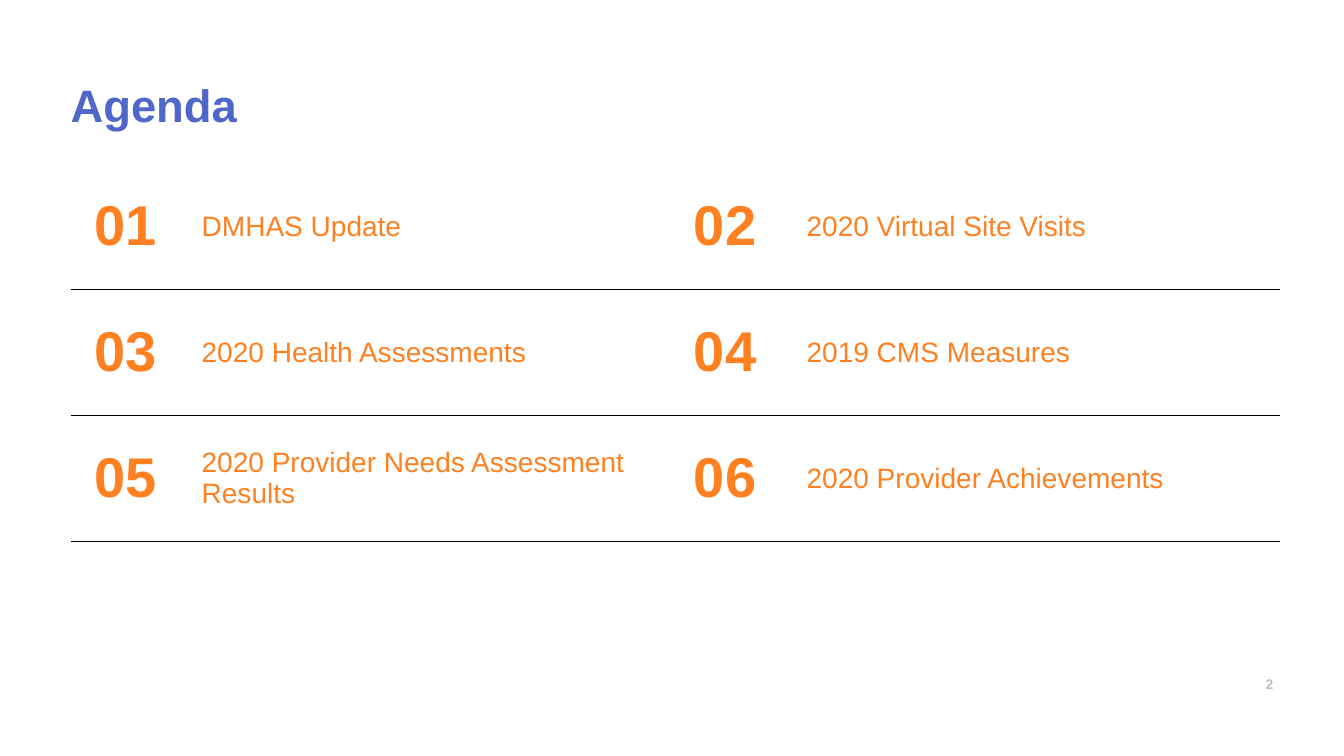
from lxml import etree
from pptx import Presentation
from pptx.dml.color import RGBColor
from pptx.enum.text import MSO_ANCHOR, MSO_AUTO_SIZE, PP_ALIGN
from pptx.oxml import parse_xml
from pptx.oxml.ns import nsdecls, qn
from pptx.util import Inches, Pt

LEFT, RIGHT = PP_ALIGN.LEFT, PP_ALIGN.RIGHT
MIDDLE = MSO_ANCHOR.MIDDLE
FIXED = MSO_AUTO_SIZE.NONE

BLUE = RGBColor(0x4E, 0x67, 0xC8)
ORANGE = RGBColor(0xFF, 0x80, 0x21)
GRAY = RGBColor(0xBF, 0xBF, 0xBF)
WHITE = RGBColor(0xFF, 0xFF, 0xFF)
BLACK = RGBColor(0, 0, 0)

PLAIN = "{2D5ABB26-0587-4C30-8999-92F81FD0307C}"
SIDES = ("left", "top", "right", "bottom")
COLS = 2
TOPICS = [
    "DMHAS Update",
    "2020 Virtual Site Visits",
    "2020 Health Assessments",
    "2019 CMS Measures",
    "2020 Provider Needs Assessment Results",
    "2020 Provider Achievements",
]


def write(frame, text, size, color, bold, align=LEFT):
    para = frame.paragraphs[0]
    para.alignment = align
    run = para.add_run()
    run.text = text
    look = {"name": "Arial", "size": Pt(size), "bold": bold}
    for key, value in look.items():
        setattr(run.font, key, value)
    run.font.color.rgb = color
    return para


def pad(item, *insets):
    """Set the margins of a cell or text frame: left, top, right, bottom."""
    for side, inset in zip(SIDES, insets):
        setattr(item, f"margin_{side}", Inches(inset))


def rule(cell):
    """Draw a thin line along the bottom of a cell."""
    line = parse_xml(f'<a:lnB {nsdecls("a")} w="{Pt(0.5)}"/>')
    fill = etree.SubElement(line, qn("a:solidFill"))
    etree.SubElement(fill, qn("a:srgbClr"), val=str(BLACK))
    cell._tc.get_or_add_tcPr().insert(0, line)


def add_title(slide, left, top, width, height):
    title = slide.shapes.title
    box = {"left": left, "top": top, "width": width, "height": height}
    for key, value in box.items():
        setattr(title, key, Inches(value))
    frame = title.text_frame
    frame.auto_size = FIXED
    frame.vertical_anchor = MIDDLE
    pad(frame, 0, 0, 0, 0)
    write(frame, "Agenda", 32.4, BLUE, True).line_spacing = 1.14


def fill_cell(cell, text, size, bold, align, insets):
    cell.fill.solid()
    cell.fill.fore_color.rgb = WHITE
    cell.vertical_anchor = MIDDLE
    pad(cell, *insets)
    write(cell.text_frame, text, size, ORANGE, bold, align)
    rule(cell)


def add_agenda(slide, left, top, width, height):
    rows = len(TOPICS) // COLS
    shape = slide.shapes.add_table(
        rows, 2 * COLS, Inches(left), Inches(top), Inches(width), Inches(height))
    table = shape.table
    table.first_row = table.horz_banding = False
    table._tbl.tblPr.find(qn("a:tableStyleId")).text = PLAIN
    for row in table.rows:
        row.height = Inches(height / rows)
    slim = 0.9
    for col, column in enumerate(table.columns):
        column.width = Inches(width / COLS - slim if col % 2 else slim)
    for i, topic in enumerate(TOPICS):
        row, col = divmod(i, COLS)
        edge = (0.1, 0, 0.1, 0) if col else (0.05, 0.03, 0.05, 0.03)
        fill_cell(table.cell(row, 2 * col), f"{i + 1:02}", 40, True, RIGHT, edge)
        fill_cell(table.cell(row, 2 * col + 1), topic, 20, False, LEFT,
                  (0.4, 0, 0.2, 0))


def add_number(slide, left, top, width, height):
    box = slide.shapes.add_textbox(
        Inches(left), Inches(top), Inches(width), Inches(height))
    frame = box.text_frame
    frame.word_wrap = True
    pad(frame, 0, 0, 0, 0)
    write(frame, "2", 10, GRAY, True, RIGHT)


def main():
    deck = Presentation()
    deck.slide_width, deck.slide_height = Inches(13.33), Inches(7.5)
    slide = deck.slides.add_slide(deck.slide_layouts[5])
    add_title(slide, 0.7, 0.7, 11.93, 0.6)
    add_agenda(slide, 0.7, 1.62, 12, 3.75)
    add_number(slide, 12.07, 6.7, 0.56, 0.17)
    deck.save("out.pptx")


if __name__ == "__main__":
    main()
